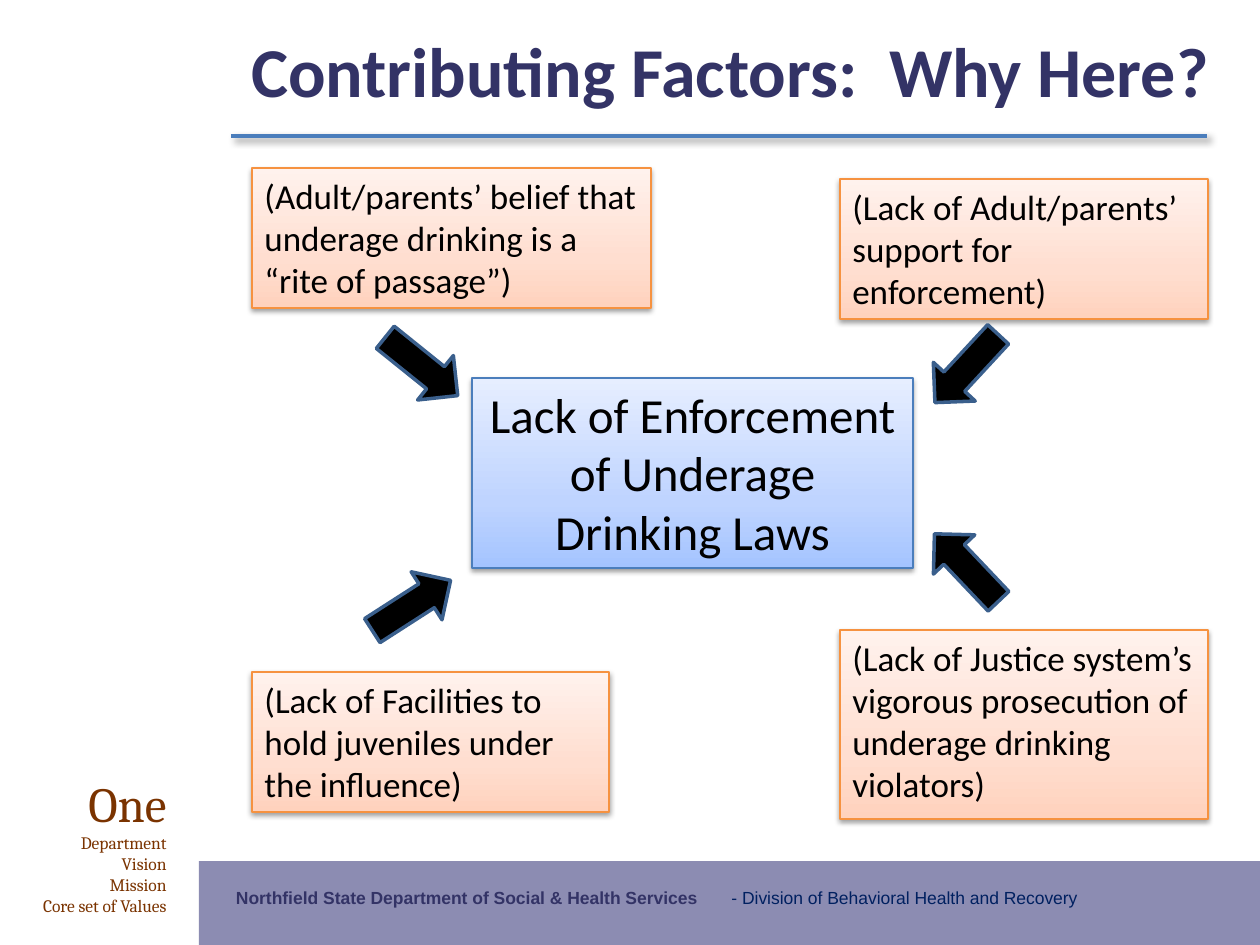
from copy import deepcopy
from lxml.etree import SubElement
from pptx import Presentation
from pptx.dml.color import RGBColor as RGB
from pptx.enum.shapes import MSO_CONNECTOR as LINK, MSO_SHAPE as SHAPE
from pptx.enum.text import MSO_ANCHOR as ANCHOR, MSO_AUTO_SIZE as FIT, PP_ALIGN as ALIGN
from pptx.oxml.ns import qn
from pptx.util import Pt

PX = 914400 / 126
COLORS = {
    "navy": "333366", "band": "666699", "brown": "7A3300", "division": "002060",
    "black": "000000", "blue": "4B7EBC", "orange": "F69240", "arrow": "3A5F8C",
}
PROBLEM_GRADIENT = ("A4C4FF", "BFD4FF", "E6EEFF")
FACTOR_GRADIENT = ("FFD2BD", "FFDED0", "FFF2ED")


def px(*lengths):
    return [round(length * PX) for length in lengths]


def write(shape, text, size, font="Calibri", color="black", bold=False,
          align=ALIGN.LEFT, anchor=ANCHOR.TOP, first_size=None):
    frame = shape.text_frame
    frame.word_wrap = True
    frame.auto_size = FIT.NONE
    frame.vertical_anchor = anchor
    frame.text = text
    for number, paragraph in enumerate(frame.paragraphs):
        paragraph.alignment = align
        style = paragraph.font if not paragraph.runs else paragraph.runs[0].font
        style.name = font
        style.size = Pt(first_size if first_size and number == 0 else size)
        style.bold = bold
        style.color.rgb = RGB.from_string(COLORS[color])


deck = Presentation()
deck.slide_width, deck.slide_height = px(1260, 945)
slide = deck.slides.add_slide(deck.slide_layouts[5])
shapes = slide.shapes

band = shapes.add_shape(SHAPE.RECTANGLE, *px(199, 861, 1061, 84))
band.shadow.inherit = False
band.fill.solid()
band.fill.fore_color.rgb = RGB.from_string(COLORS["band"])
band_color = band._element.spPr.find(qn("a:solidFill"))[0]
SubElement(band_color, qn("a:alpha"), val="75000")
band.line.fill.background()
write(band, "Northfield State Department of Social & Health Services", 10,
      font="Arial", color="navy", bold=True)
band.text_frame.margin_left, band.text_frame.margin_top = px(37, 26)

values = shapes.add_textbox(*px(0, 767, 179, 156))
write(values, "One\nDepartment\nVision\nMission\nCore set of Values", 10,
      font="Cambria", color="brown", align=ALIGN.RIGHT, first_size=28)

division = shapes.add_textbox(*px(719, 881, 400, 34))
write(division, "- Division of Behavioral Health and Recovery", 10,
      font="Arial", color="division")

title = shapes.title
title.left, title.top, title.width, title.height = px(231, 21, 998, 97)
write(title, "Contributing Factors:  Why Here?", 40, color="navy", bold=True,
      align=ALIGN.CENTER)

shadowed = []
boxes = [
    ((472, 378, 441, 190), "Lack of Enforcement of Underage Drinking Laws",
     28, ALIGN.CENTER, PROBLEM_GRADIENT, "blue"),
]
factors = [
    ((840, 179, 368, 140), "(Lack of Adult/parents’ support for enforcement)"),
    ((840, 630, 368, 189), "(Lack of Justice system’s vigorous prosecution of "
                           "underage drinking violators)"),
    ((252, 672, 357, 140), "(Lack of Facilities to hold juveniles under the influence)"),
    ((252, 168, 399, 140), "(Adult/parents’ belief that underage drinking is a "
                           "“rite of passage”)"),
]
for place, text in factors:
    boxes.append((place, text, 20, ALIGN.LEFT, FACTOR_GRADIENT, "orange"))

for place, text, size, align, gradient, edge in boxes:
    box = shapes.add_shape(SHAPE.RECTANGLE, *px(*place))
    box.fill.gradient()
    box.fill.gradient_angle = 90
    stop_list = box._element.spPr.find(qn("a:gradFill")).find(qn("a:gsLst"))
    stop_list.insert(1, deepcopy(stop_list[0]))
    for stop, position, shade in zip(box.fill.gradient_stops, (0, 0.35, 1), gradient):
        stop.position = position
        stop.color.rgb = RGB.from_string(shade)
    box.line.color.rgb = RGB.from_string(COLORS[edge])
    box.line.width = Pt(0.75)
    box.shadow.inherit = False
    shadowed.append((box._element.spPr.find(qn("a:effectLst")), 38, 3.1, 1.6, 90))
    write(box, text, size, align=align)

for left, top, angle in [(375, 338, 38.8), (920, 340, 132.8),
                         (920, 539, 226.5), (365, 577, 327.3)]:
    arrow = shapes.add_shape(SHAPE.RIGHT_ARROW, *px(left, top, 93, 57))
    arrow.rotation = angle
    arrow.shadow.inherit = False
    arrow.fill.solid()
    arrow.fill.fore_color.rgb = RGB.from_string(COLORS["black"])
    arrow.line.color.rgb = RGB.from_string(COLORS["arrow"])
    arrow.line.width = Pt(2)

rule = shapes.add_connector(LINK.STRAIGHT, *px(231, 136, 1207, 136))
rule.line.color.rgb = RGB.from_string(COLORS["blue"])
rule.line.width = Pt(2.25)
rule_effects = SubElement(rule._element.spPr, qn("a:effectLst"))
shadowed.append((rule_effects, 40, 4, 3, 45))

for effects, opacity, blur, distance, direction in shadowed:
    shadow = SubElement(effects, qn("a:outerShdw"), blurRad=str(Pt(blur)),
                        dist=str(Pt(distance)), dir=str(direction * 60000),
                        rotWithShape="0")
    shade = SubElement(shadow, qn("a:srgbClr"), val=COLORS["black"])
    SubElement(shade, qn("a:alpha"), val=str(opacity * 1000))

deck.save("out.pptx")
